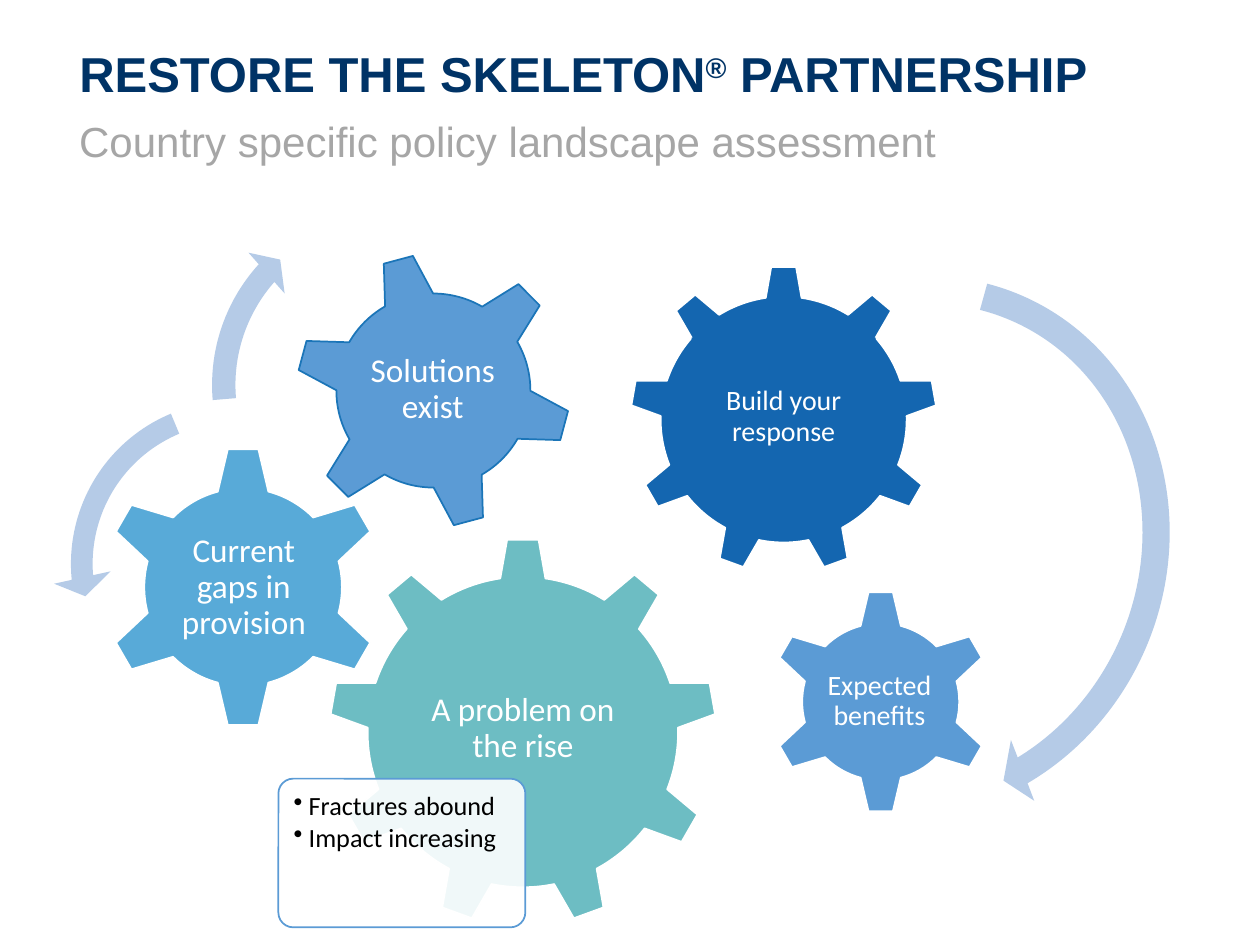
from lxml import etree
from pptx import Presentation
from pptx.dml.color import RGBColor
from pptx.enum import shapes, text
from pptx.oxml import ns
from pptx.util import Inches, Pt

COLORS = {
    "navy": "003366", "gray": "A6A6A6", "white": "FFFFFF", "black": "000000",
    "teal": "6DBDC3", "sky": "58AAD8", "blue": "5B9BD5", "deep": "1466B0",
    "edge": "1B75B8", "arrow": "B5CBE7",
}
MSO = shapes.MSO_SHAPE
ALIGN = text.PP_ALIGN
ANCHOR = text.MSO_ANCHOR


def rgb(name):
    return RGBColor.from_string(COLORS[name])


class Deck:
    def __init__(self, prs):
        self.s = prs.slides.add_slide(prs.slide_layouts[5])

    def shape(self, kind, at, fill, line=None, rotation=0, adj=()):
        sp = self.s.shapes.add_shape(kind, *map(Inches, at))
        sp.shadow.inherit = False
        sp.rotation = rotation
        for i, value in enumerate(adj):
            sp.adjustments[i] = value
        sp.fill.solid()
        sp.fill.fore_color.rgb = rgb(fill)
        if line:
            sp.line.color.rgb = rgb(line)
            sp.line.width = Pt(1)
        else:
            sp.line.fill.background()
        return sp

    def frame(self, sp, inset=None, anchor=ANCHOR.TOP):
        tf = sp.text_frame
        tf.word_wrap = True
        tf.auto_size = text.MSO_AUTO_SIZE.NONE
        tf.vertical_anchor = anchor
        if inset is not None:
            tf.margin_left = tf.margin_right = Inches(inset)
            tf.margin_top = tf.margin_bottom = Inches(inset)
        return tf

    def box(self, at, inset=None, anchor=ANCHOR.TOP):
        sp = self.s.shapes.add_textbox(*map(Inches, at))
        return sp, self.frame(sp, inset, anchor)

    def run(self, p, words, size, color, font="Calibri", bold=False):
        r = p.add_run()
        r.text = words
        r.font.size = Pt(size)
        r.font.name = font
        r.font.bold = bold
        r.font.color.rgb = rgb(color)
        return r

    def title(self, at, parts):
        sp = self.s.shapes.title
        sp.left, sp.top, sp.width, sp.height = map(Inches, at)
        p = self.frame(sp, anchor=ANCHOR.BOTTOM).paragraphs[0]
        p.alignment = ALIGN.LEFT
        p.line_spacing = 0.9
        for words, baseline in parts:
            r = self.run(p, words, 28, "navy", "Arial", True)
            if baseline:
                r._r.get_or_add_rPr().set("baseline", str(baseline * 1000))

    def subtitle(self, at, words):
        p = self.box(at)[1].paragraphs[0]
        p.line_spacing = 0.9
        self.run(p, words, 24, "gray", "Arial")

    def label(self, at, words, size, fill=None):
        sp, tf = self.box(at, 0.03 if size > 16 else 0.02, ANCHOR.MIDDLE)
        if fill:
            sp.fill.solid()
            sp.fill.fore_color.rgb = rgb(fill)
        p = tf.paragraphs[0]
        p.alignment = ALIGN.CENTER
        p.line_spacing = 0.9
        self.run(p, words, size, "white")

    def callout(self, at, text_at, items):
        sp = self.shape(MSO.ROUNDED_RECTANGLE, at, "white", "blue", adj=[0.1])
        clr = sp.fill._xPr.find(".//" + ns.qn("a:srgbClr"))
        etree.SubElement(clr, ns.qn("a:alpha")).set("val", "90000")
        tf = self.box(text_at, 0.08)[1]
        for i, words in enumerate(items):
            p = tf.add_paragraph() if i else tf.paragraphs[0]
            p.level = 1
            p.line_spacing = 0.9
            p.space_after = Pt(2.25)
            pPr = p._p.get_or_add_pPr()
            pPr.set("marL", str(Inches(0.12)))
            pPr.set("indent", str(Inches(-0.12)))
            etree.SubElement(pPr, ns.qn("a:buChar")).set("char", "•")
            self.run(p, words, 15, "black")


def main():
    prs = Presentation()
    prs.slide_width, prs.slide_height = Inches(10), Inches(7.5)
    d = Deck(prs)

    d.title((0.53, 0.33, 8.96, 0.54),
            [("RESTORE THE SKELETON", 0), ("®", 30), (" PARTNERSHIP", 0)])
    d.subtitle((0.53, 0.91, 8.96, 0.55), "Country specific policy landscape assessment")

    d.shape(MSO.GEAR_9, (2.61, 4.27, 3.08, 3.08), "teal", "white")
    d.label((3.23, 4.99, 1.84, 1.58), "A problem on the rise", 19)
    d.callout((2.21, 6.18, 1.96, 1.18), (2.25, 6.21, 1.89, 1.11),
              ["Fractures abound", "Impact increasing"])

    d.shape(MSO.GEAR_6, (0.81, 3.54, 2.24, 2.24), "sky", "white")
    d.label((1.38, 4.11, 1.11, 1.11), "Current gaps in provision", 19)
    d.shape(MSO.GEAR_6, (2.34, 2, 2.2, 2.2), "blue", "edge", rotation=345)
    d.label((2.82, 2.48, 1.23, 1.23), "Solutions exist", 19)

    d.shape(MSO.CIRCULAR_ARROW, (5.1, 2.02, 4.31, 4.65), "arrow", rotation=21.8,
            adj=[0.05, 2.99, 25.35, 158.22, 0.06])
    d.shape(MSO.LEFT_CIRCULAR_ARROW, (0.42, 3.04, 2.87, 2.87), "arrow",
            adj=[0.06, 4.3, 104.89, 148.38, 0.08])
    d.shape(MSO.CIRCULAR_ARROW, (1.56, 1.51, 3.09, 3.09), "arrow",
            adj=[0.06, 3.94, 133.14, 105.08, 0.07])

    d.shape(MSO.GEAR_9, (5, 2.11, 2.44, 2.44), "deep", "white")
    d.label((5.49, 2.68, 1.46, 1.26), "Build your response", 16, "deep")
    d.shape(MSO.GEAR_6, (6.1, 4.68, 1.78, 1.78), "blue", "white")
    d.label((6.54, 5.13, 0.88, 0.88), "Expected benefits", 16)

    prs.save("out.pptx")


if __name__ == "__main__":
    main()
